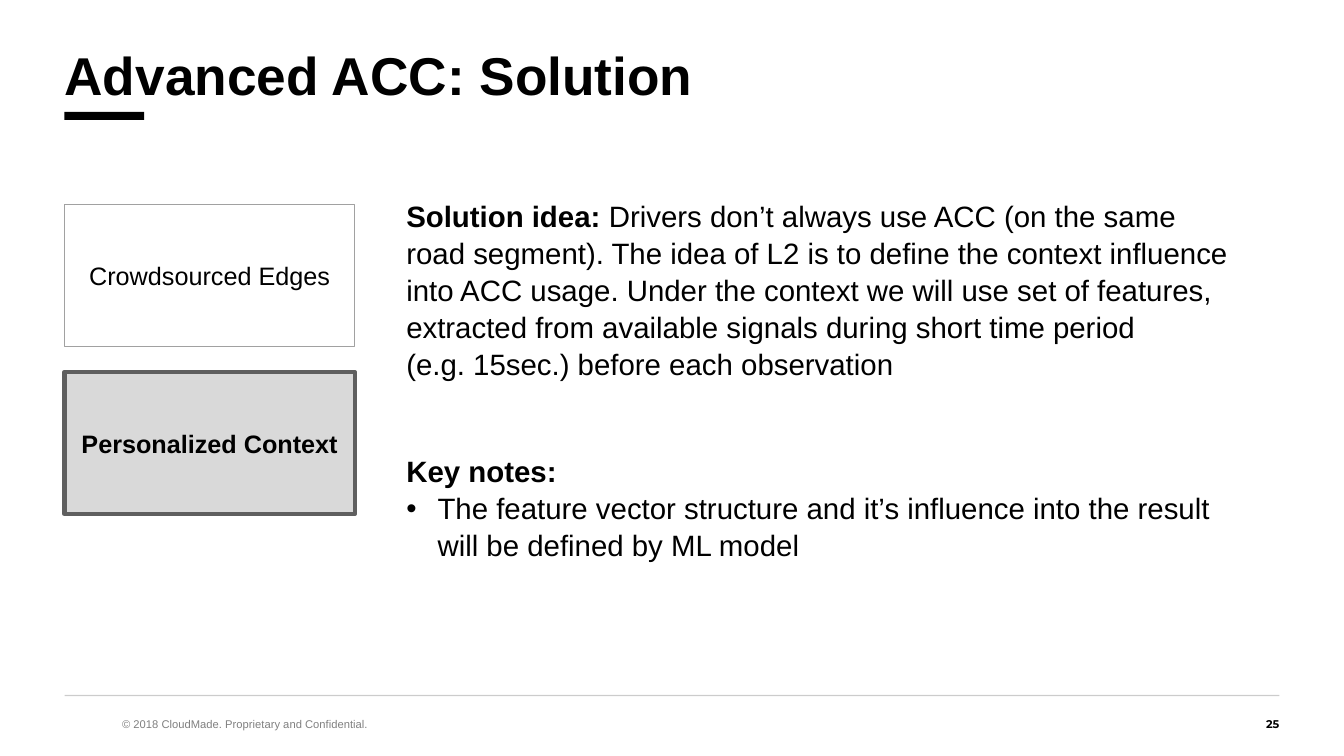
from lxml.etree import SubElement
from pptx import Presentation
from pptx.dml.color import RGBColor
from pptx.enum.shapes import MSO_CONNECTOR, MSO_SHAPE
from pptx.enum.text import MSO_ANCHOR, MSO_AUTO_SIZE, PP_ALIGN
from pptx.oxml.ns import qn
from pptx.util import Inches, Pt

WIDE, HIGH = Inches(13.33), Inches(7.5)
LEFT, SPAN = 4.8, 90.4
BODY = 21


def area(x, y, w, h):
    """Turn percentages of the slide into a left, top, width, height tuple."""
    return (int(WIDE * x / 100), int(HIGH * y / 100),
            int(WIDE * w / 100), int(HIGH * h / 100))


def place(shape, box):
    """Move a shape to a box."""
    shape.left, shape.top, shape.width, shape.height = box


def color(code):
    """Read a hex string as a colour."""
    return RGBColor.from_string(code)


def style(run, size, bold=False, code="000000", face="Arial"):
    """Format one run."""
    font = run.font
    font.size, font.bold, font.name = Pt(size), bold, face
    font.color.rgb = color(code)


def frame(shape, pad=(0, 0), anchor=MSO_ANCHOR.MIDDLE):
    """Set wrapping, insets and anchor, and return the text frame."""
    text = shape.text_frame
    text.word_wrap, text.auto_size = True, MSO_AUTO_SIZE.NONE
    text.vertical_anchor = anchor
    text.margin_left = text.margin_right = Inches(pad[0])
    text.margin_top = text.margin_bottom = Inches(pad[1])
    return text


def write(text, words, align, size, **look):
    """Fill a frame with one formatted paragraph."""
    text.text = words
    para = text.paragraphs[0]
    para.alignment = align
    style(para.runs[0], size, **look)
    return para


def block(slide, box, fill, edge=None, thick=1):
    """Add a plain rectangle."""
    shape = slide.shapes.add_shape(MSO_SHAPE.RECTANGLE, *box)
    shape.shadow.inherit = False
    shape.fill.solid()
    shape.fill.fore_color.rgb = color(fill)
    if edge:
        shape.line.color.rgb = color(edge)
        shape.line.width = Pt(thick)
    else:
        shape.line.fill.background()
    return shape


def label(slide, box, words, align, **look):
    """Add a small footer text."""
    shape = slide.shapes.add_textbox(*box)
    write(frame(shape), words, align, 8, **look)


def rule(slide, x, y, w):
    """Add the faint footer line."""
    left, top, width, _ = area(x, y, w, 0)
    line = slide.shapes.add_connector(
        MSO_CONNECTOR.STRAIGHT, left, top, left + width, top)
    line.line.color.rgb = color("000000")
    line.line.width = Pt(1)
    props = line._element.spPr
    SubElement(props.find(".//" + qn("a:srgbClr")), qn("a:alpha"), val="20000")
    SubElement(props, qn("a:effectLst"))


def fill(para, lead, lines, gap=0, mark=None):
    """Write a bold lead and broken lines, with an optional bullet."""
    props = para._p.get_or_add_pPr()
    inch = Inches(0.31) if mark else 0
    props.set("marL", str(inch))
    props.set("indent", str(-inch))
    if mark:
        tint = SubElement(props, qn("a:buClr"))
        SubElement(tint, qn("a:srgbClr"), val="000000")
        SubElement(props, qn("a:buChar"), char=mark)
    else:
        SubElement(props, qn("a:buNone"))
    para.space_before, para.space_after = Pt(gap), Pt(0)
    para.line_spacing = 1.05
    para.alignment = PP_ALIGN.LEFT
    if lead:
        run = para.add_run()
        run.text = lead
        style(run, BODY, bold=True)
    for i, line in enumerate(lines):
        if i:
            para.add_line_break()
        run = para.add_run()
        run.text = line
        style(run, BODY)
    for stop in para._p.findall(qn("a:br")):
        SubElement(stop, qn("a:rPr"), sz=str(BODY * 100))


def main():
    """Build the slide and save it."""
    deck = Presentation()
    deck.slide_width, deck.slide_height = WIDE, HIGH
    slide = deck.slides.add_slide(deck.slide_layouts[1])
    title, body = slide.placeholders

    label(slide, area(9.08, 94.13, 47.79, 3.33),
          "© 2018 CloudMade. Proprietary and Confidential.",
          PP_ALIGN.LEFT, code="808080")
    label(slide, area(81.32, 94.13, 13.88, 3.33), "25",
          PP_ALIGN.RIGHT, bold=True, face="Montserrat")
    rule(slide, LEFT, 92, SPAN)
    block(slide, area(LEFT, 14.8, 5.93, 1.07), "000000")

    place(title, area(LEFT, 6.13, SPAN, 8.53))
    head = write(frame(title), "Advanced ACC: Solution",
                 PP_ALIGN.LEFT, 38, bold=True)
    head.line_spacing = 0.9

    steps = [("Crowdsourced Edges", "FFFFFF", "A1A1A1", 1, False),
             ("Personalized Context", "D9D9D9", "5F5F5F", 3, True)]
    for row, (words, back, edge, thick, bold) in enumerate(steps):
        box = area(LEFT, 27.07 + row * 22.13, 21.6, 18.8)
        shape = block(slide, box, back, edge, thick)
        write(frame(shape, (0.1, 0.05)), words,
              PP_ALIGN.CENTER, 18, bold=bold)

    place(body, area(29.48, 25.33, 65.72, 61.33))
    text = frame(body, (0.1, 0.05), MSO_ANCHOR.TOP)
    fill(text.paragraphs[0], "Solution idea: ", [
        "Drivers don’t always use ACC (on the same",
        "road segment). The idea of L2 is to define the context influence "
        "into ACC usage. Under the context we will use set of features, "
        "extracted from available signals during short time period",
        "(e.g. 15sec.) before each observation"])
    fill(text.add_paragraph(), "Key notes:", [], gap=50)
    fill(text.add_paragraph(), "", [
        "The feature vector structure and it’s influence into the result",
        "will be defined by ML model"], mark="•")
    deck.save("out.pptx")


if __name__ == "__main__":
    main()
